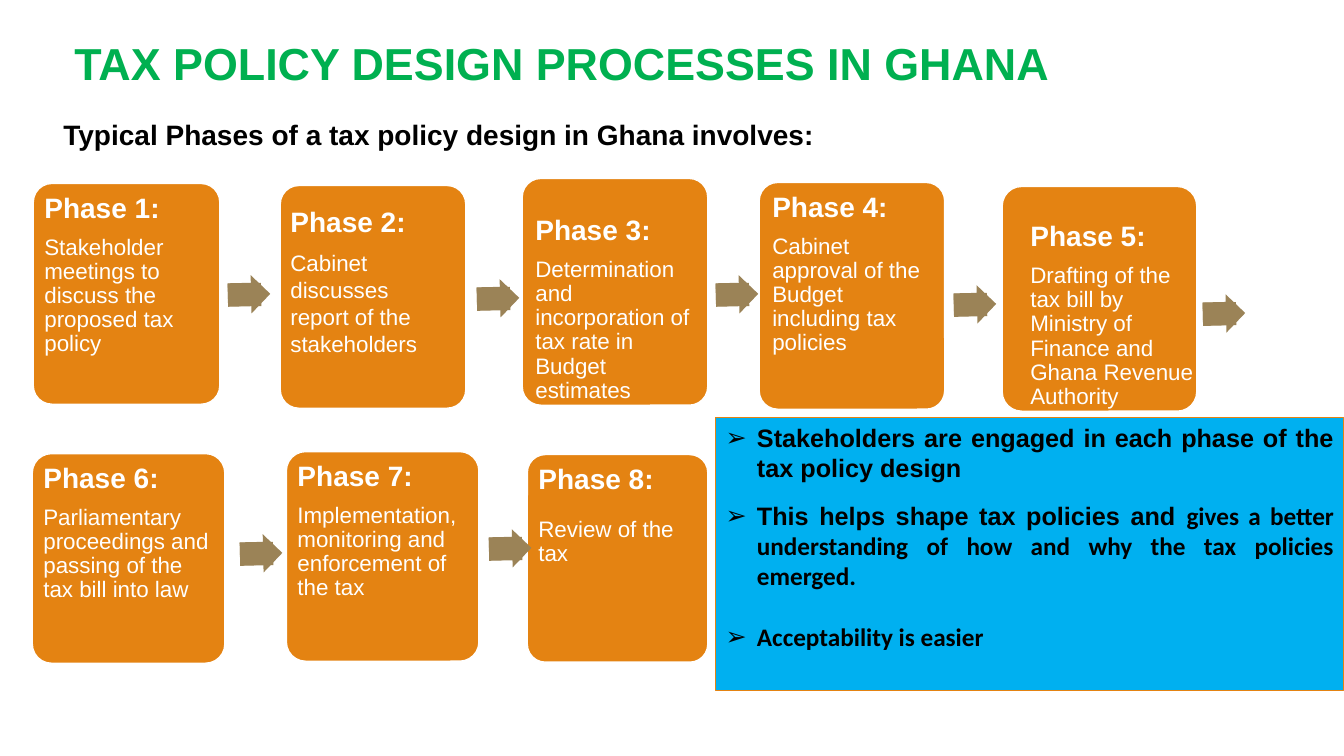
from typing import NamedTuple

from lxml import etree
from pptx import Presentation
from pptx.dml.color import RGBColor
from pptx.enum.shapes import MSO_SHAPE
from pptx.enum.text import MSO_ANCHOR, PP_ALIGN
from pptx.oxml.ns import qn
from pptx.util import Inches, Pt

CARD = MSO_SHAPE.ROUNDED_RECTANGLE
ARROW = MSO_SHAPE.RIGHT_ARROW
RECT = MSO_SHAPE.RECTANGLE
TOP = MSO_ANCHOR.TOP
LEFT = PP_ALIGN.LEFT
JUSTIFY = PP_ALIGN.JUSTIFY

ORANGE = "E48312"
BROWN = "9B8357"
BLUE = "00B0F0"
GREEN = "00B050"
WHITE = "FFFFFF"
BLACK = "000000"


class Box(NamedTuple):
    left: float
    top: float
    width: float
    height: float


class Phase(NamedTuple):
    card: Box
    text: Box
    body: str
    lines: float = 0.9  # line spacing
    gap: float = 8  # points below the heading


class Run(NamedTuple):
    text: str
    font: str = "Arial"


class Point(NamedTuple):
    runs: list[Run]
    before: float


PHASES = [
    Phase(Box(0.33, 1.82, 1.85, 2.19), Box(0.33, 1.82, 1.85, 1.93),
          "Stakeholder meetings to discuss the proposed tax policy"),
    Phase(Box(2.78, 1.84, 1.84, 2.21), Box(2.77, 1.92, 1.75, 1.36),
          "Cabinet discusses report of the stakeholders", lines=1),
    Phase(Box(5.18, 1.77, 1.84, 2.25), Box(5.2, 2.04, 1.84, 1.88),
          "Determination and incorporation of tax rate in Budget estimates"),
    Phase(Box(7.53, 1.81, 1.84, 2.25), Box(7.55, 1.81, 1.84, 1.5),
          "Cabinet approval of the Budget including tax policies"),
    Phase(Box(9.94, 1.85, 1.93, 2.23), Box(10.11, 2.1, 1.93, 1.49),
          "Drafting of the tax bill by Ministry of Finance and "
          "Ghana Revenue Authority"),
    Phase(Box(0.32, 4.5, 1.91, 2.08), Box(0.32, 4.5, 1.91, 1.39),
          "Parliamentary proceedings and passing of the tax bill into law"),
    Phase(Box(2.84, 4.48, 1.91, 2.08), Box(2.84, 4.48, 1.91, 1.39),
          "Implementation, monitoring and enforcement of the tax"),
    Phase(Box(5.23, 4.51, 1.79, 2.06), Box(5.23, 4.51, 1.79, 1.38),
          "Review of the tax", gap=16),
]

# Left and top of each arrow
ARROWS = [(2.26, 2.73), (4.73, 2.77), (7.1, 2.73), (9.46, 2.83),
          (11.93, 2.92), (2.38, 5.3), (4.85, 5.25)]

POINTS = [
    Point([Run("Stakeholders are engaged in each phase of the "
               "tax policy design")], 0),
    Point([Run("This helps shape tax policies and "),
           Run("gives a better understanding of how and why the "
               "tax policies emerged.", "Calibri")], 12.5),
    Point([Run("Acceptability is easier", "Calibri")], 22),
]


def color(code: str) -> RGBColor:
    return RGBColor.from_string(code)


def place(box: Box) -> list[int]:
    return [Inches(size) for size in box]


def add_run(para, text: str, size: float, code: str,
            bold: bool = True, font: str = "Arial") -> None:
    run = para.add_run()
    run.text = text
    run.font.name = font
    run.font.size = Pt(size)
    run.font.bold = bold
    run.font.color.rgb = color(code)


def add_shape(slide, kind, box: Box, fill: str, line: str = "",
              weight: float = 1):
    shape = slide.shapes.add_shape(kind, *place(box))
    shape.shadow.inherit = False
    shape.fill.solid()
    shape.fill.fore_color.rgb = color(fill)
    if line:
        shape.line.color.rgb = color(line)
        shape.line.width = Pt(weight)
    else:
        shape.line.fill.background()
    return shape


def add_text(slide, box: Box, wrap: bool = True):
    frame = slide.shapes.add_textbox(*place(box)).text_frame
    frame.word_wrap = wrap
    return frame


def add_phase(slide, number: int, phase: Phase) -> None:
    card = add_shape(slide, CARD, phase.card, ORANGE, WHITE)
    card.adjustments[0] = 0.1
    frame = add_text(slide, phase.text)
    frame.margin_left = frame.margin_right = frame.margin_top = Inches(0.11)
    frame.margin_bottom = Inches(0.06)
    head, body = frame.paragraphs[0], frame.add_paragraph()
    head.line_spacing = body.line_spacing = phase.lines
    head.space_after = Pt(phase.gap)
    add_run(head, f"Phase {number}:", 20, WHITE)
    add_run(body, phase.body, 16, WHITE, bold=False)


def add_arrow(slide, left: float, top: float) -> None:
    arrow = add_shape(slide, ARROW, Box(left, top, 0.42, 0.38), BROWN)
    arrow.adjustments[0] = 0.6
    arrow.adjustments[1] = 0.5
    shaft = add_shape(slide, RECT, Box(left, top + 0.08, 0.33, 0.23), BROWN)
    arrow.rotation = shaft.rotation = 358.7


def add_bullet(para, indent: float) -> None:
    props = para._p.get_or_add_pPr()
    props.set("marL", str(Inches(indent)))
    props.set("indent", str(-Inches(indent)))
    etree.SubElement(props, qn("a:buFont"), typeface="Wingdings 2")
    props[-1].set("typeface", "Arial")
    etree.SubElement(props, qn("a:buChar"), char="➢")


def add_notice(slide) -> None:
    panel = add_shape(slide, RECT, Box(7.1, 4.14, 6.23, 2.71), BLUE,
                      ORANGE, 0.75)
    frame = panel.text_frame
    frame.word_wrap = True
    frame.vertical_anchor = TOP
    for index, point in enumerate(POINTS):
        para = frame.add_paragraph() if index else frame.paragraphs[0]
        para.alignment = JUSTIFY
        if index:
            para.space_before = Pt(point.before)
        add_bullet(para, 0.31)
        for run in point.runs:
            add_run(para, run.text, 18, BLACK, font=run.font)


def main() -> None:
    deck = Presentation()
    deck.slide_width = Inches(13.33)
    deck.slide_height = Inches(7.5)
    slide = deck.slides.add_slide(deck.slide_layouts[6])

    # Phases and the arrows between them
    for number, phase in enumerate(PHASES, 1):
        add_phase(slide, number, phase)
    for left, top in ARROWS:
        add_arrow(slide, left, top)

    # Lead line, notice and title
    lead = add_text(slide, Box(0.53, 1.12, 11.14, 0.42)).paragraphs[0]
    add_run(lead, "Typical Phases of a tax policy design in Ghana involves:",
            20, BLACK)
    add_notice(slide)
    title = add_text(slide, Box(0.64, 0.04, 10.26, 0.91), False).paragraphs[0]
    title.alignment = LEFT
    title.line_spacing = 1.5
    add_run(title, "TAX POLICY DESIGN PROCESSES IN GHANA", 32, GREEN)

    deck.save("out.pptx")


if __name__ == "__main__":
    main()
